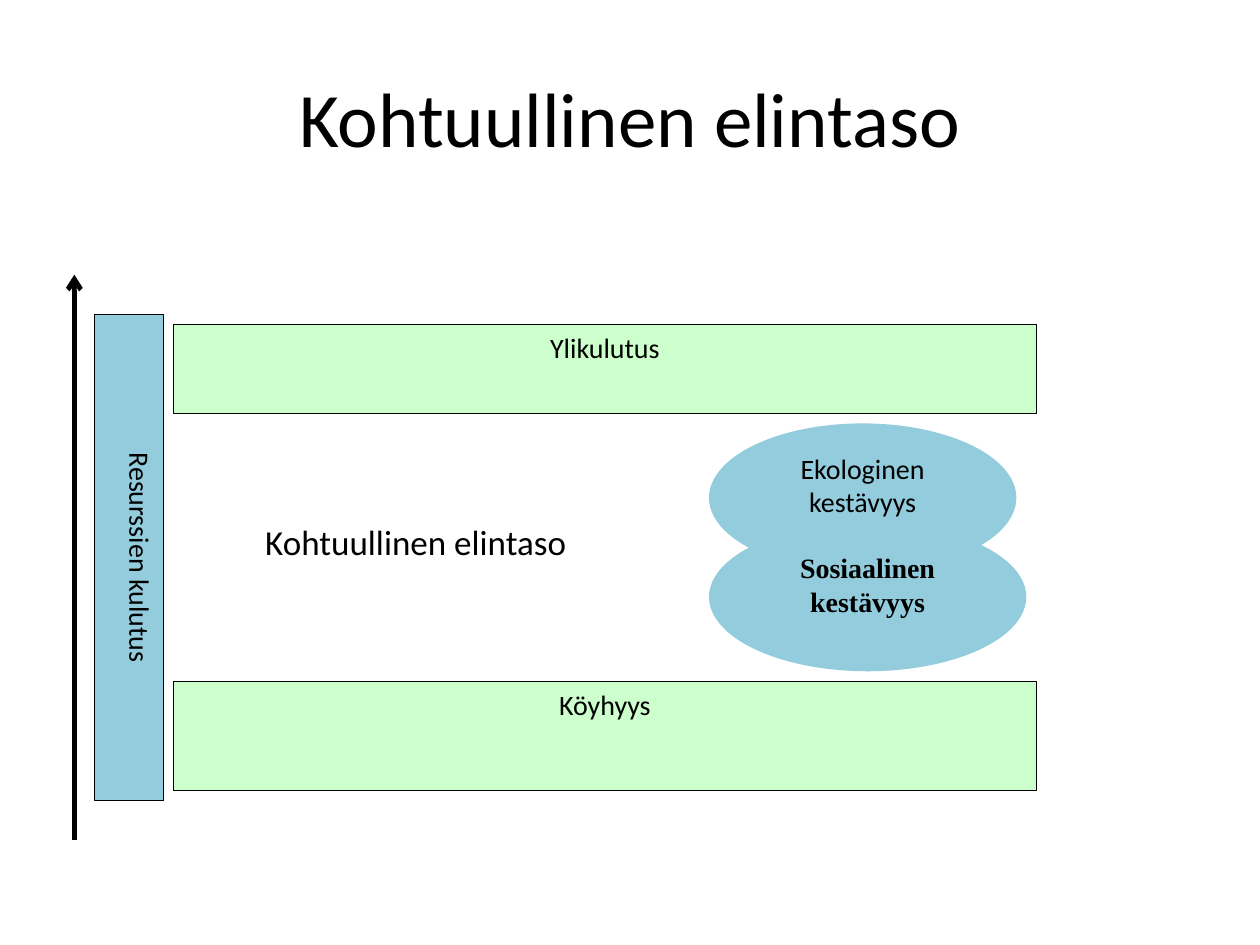
from dataclasses import dataclass

from lxml import etree
from pptx import Presentation
from pptx.dml.color import RGBColor
from pptx.enum.shapes import MSO_CONNECTOR, MSO_SHAPE
from pptx.enum.text import MSO_ANCHOR, PP_ALIGN
from pptx.oxml.ns import qn
from pptx.util import Inches, Pt

RECTANGLE, ELLIPSE = MSO_SHAPE.RECTANGLE, MSO_SHAPE.OVAL
STRAIGHT = MSO_CONNECTOR.STRAIGHT
TOP, MIDDLE = MSO_ANCHOR.TOP, MSO_ANCHOR.MIDDLE
LEFT, CENTER = PP_ALIGN.LEFT, PP_ALIGN.CENTER
TITLE_ONLY = 5


@dataclass(frozen=True)
class Theme:
    ink: str = "000000"
    blue: str = "93CDDD"
    green: str = "CCFFCC"
    font: str = "Calibri"
    serif: str = "Times New Roman"
    title_size: int = 44
    center_size: int = 20
    label_size: int = 16
    outline: float = 0.75
    axis: float = 2.75


THEME = Theme()

# Diagram grid: square cells counted from the tip of the axis arrow
CELL = 0.0787
ORIGIN_X, ORIGIN_Y = 0.59, 2.18


def place(column, row):
    return Inches(ORIGIN_X + column * CELL), Inches(ORIGIN_Y + row * CELL)


def area(column, row, columns, rows):
    return (*place(column, row), Inches(columns * CELL), Inches(rows * CELL))


def color(code):
    return RGBColor.from_string(code)


def write(frame, text, size=THEME.label_size, font=THEME.font, bold=False,
          align=CENTER, anchor=TOP, inset_top=0.05):
    frame.word_wrap = True
    frame.vertical_anchor = anchor
    frame.margin_top = Inches(inset_top)
    para = frame.paragraphs[0]
    para.alignment = align
    span = para.add_run()
    span.text = text
    span.font.name = font
    span.font.size = Pt(size)
    span.font.bold = bold
    span.font.color.rgb = color(THEME.ink)


def add_title(page, text):
    title = page.shapes.title
    title.left, title.top = Inches(0.5), Inches(0.3)
    title.width, title.height = Inches(9), Inches(1.25)
    write(title.text_frame, text, size=THEME.title_size, anchor=MIDDLE)


def add_block(page, kind, cells, fill, text, outlined=True, vertical=False,
              **text_format):
    block = page.shapes.add_shape(kind, *area(*cells))
    block.shadow.inherit = False
    block.fill.solid()
    block.fill.fore_color.rgb = color(fill)
    if outlined:
        block.line.color.rgb = color(THEME.ink)
        block.line.width = Pt(THEME.outline)
    else:
        block.line.fill.background()
    write(block.text_frame, text, **text_format)
    if vertical:
        block.text_frame._txBody.bodyPr.set("vert", "vert")


def add_label(page, cells, text, **text_format):
    box = page.shapes.add_textbox(*area(*cells))
    write(box.text_frame, text, **text_format)


def add_axis(page, start, end):
    axis = page.shapes.add_connector(STRAIGHT, *place(*start), *place(*end))
    axis.line.color.rgb = color(THEME.ink)
    axis.line.width = Pt(THEME.axis)
    # Arrowhead at the end, no shadow
    etree.SubElement(axis.line._get_or_add_ln(), qn("a:tailEnd"), type="arrow")
    etree.SubElement(axis._element.spPr, qn("a:effectLst"))


def main():
    deck = Presentation()
    deck.slide_width, deck.slide_height = Inches(10), Inches(7.5)
    page = deck.slides.add_slide(deck.slide_layouts[TITLE_ONLY])
    add_title(page, "Kohtuullinen elintaso")

    # Resource use axis
    add_axis(page, (0, 57), (0, 0))
    add_block(page, RECTANGLE, (2, 4, 7, 49), THEME.blue,
              "Resurssien kulutus", vertical=True)

    # Lower and upper limits
    for text, row, rows in (("Köyhyys", 41, 11), ("Ylikulutus", 5, 9)):
        add_block(page, RECTANGLE, (10, row, 87, rows), THEME.green, text)

    # Reasonable level between the limits
    add_label(page, (18, 20, 48, 15), "Kohtuullinen elintaso",
              size=THEME.center_size, align=LEFT, inset_top=0.38)

    # Kinds of sustainability
    add_block(page, ELLIPSE, (64, 15, 31, 15), THEME.blue,
              "Ekologinen kestävyys", outlined=False)
    add_block(page, ELLIPSE, (64, 25, 32, 15), THEME.blue,
              "Sosiaalinen kestävyys", outlined=False,
              font=THEME.serif, bold=True)

    deck.save("out.pptx")


if __name__ == "__main__":
    main()
